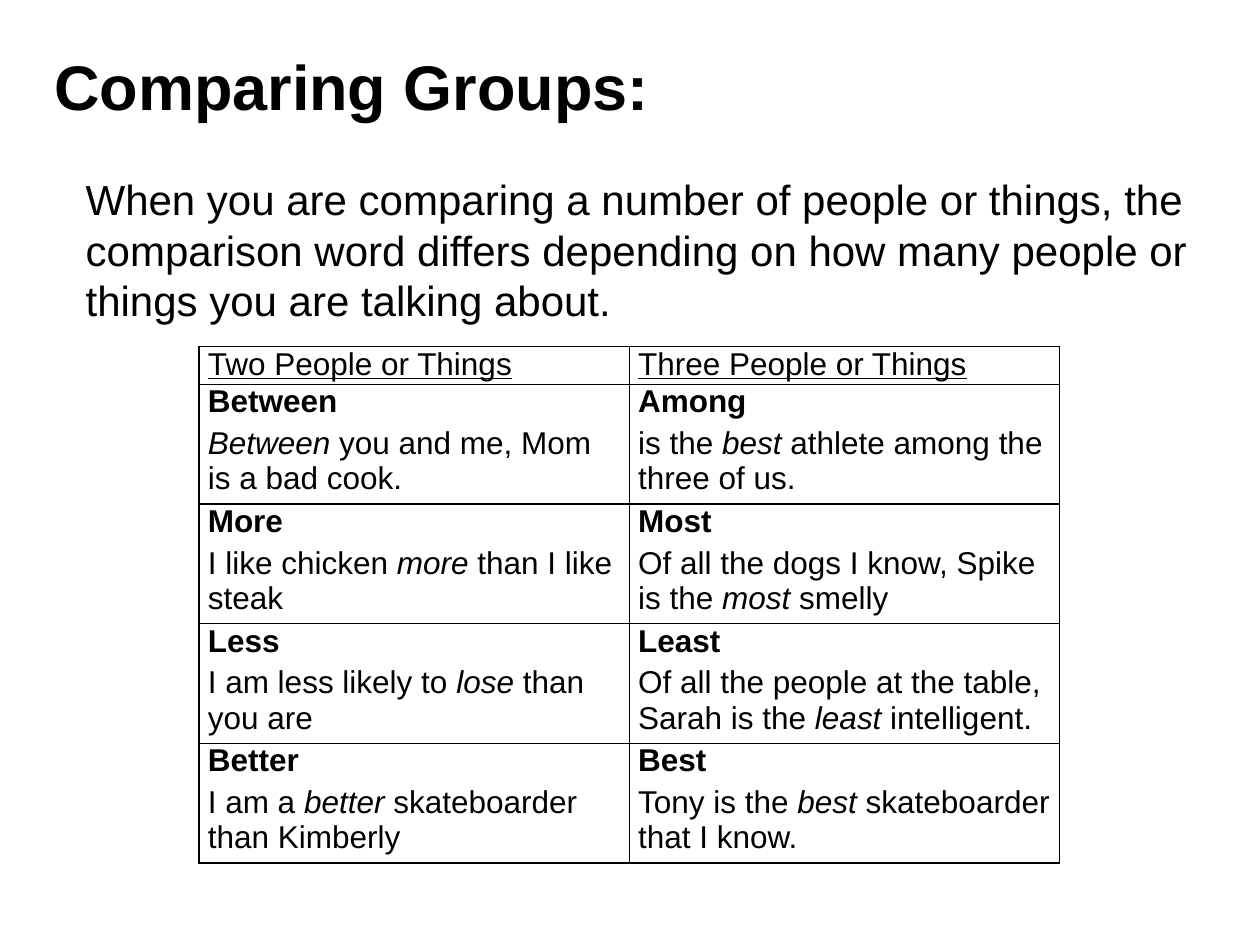
from dataclasses import dataclass

from lxml import etree
from pptx import Presentation
from pptx.dml.color import RGBColor
from pptx.enum.text import MSO_ANCHOR, MSO_AUTO_SIZE, PP_ALIGN
from pptx.oxml.ns import qn
from pptx.util import Inches, Pt

LEFT = PP_ALIGN.LEFT
TOP, MIDDLE = MSO_ANCHOR.TOP, MSO_ANCHOR.MIDDLE
NO_AUTOFIT = MSO_AUTO_SIZE.NONE
TITLE_AND_CONTENT = 1


@dataclass(frozen=True)
class Theme:
    font: str = "Arial"
    ink: str = "000000"
    title_size: int = 36
    body_size: int = 24
    table_size: int = 18
    border_width: int = 1
    example_gap: float = 3.6


THEME = Theme()
TITLE = "Comparing Groups:"
INTRO = (
    "When you are comparing a number of people or things, the comparison word "
    "differs depending on how many people or things you are talking about."
)
HEADINGS = ("Two People or Things", "Three People or Things")
COMPARISONS = [
    (
        ("Between", ("", "Between", " you and me, Mom is a bad cook.")),
        ("Among", ("is the ", "best", " athlete among the three of us.")),
    ),
    (
        ("More", ("I like chicken ", "more", " than I like steak")),
        ("Most", ("Of all the dogs I know, Spike is the ", "most", " smelly")),
    ),
    (
        ("Less", ("I am less likely to ", "lose", " than you are")),
        ("Least", ("Of all the people at the table, Sarah is the ", "least", " intelligent.")),
    ),
    (
        ("Better", ("I am a ", "better", " skateboarder than Kimberly")),
        ("Best", ("Tony is the ", "best", " skateboarder that I know.")),
    ),
]

SLIDE_SIZE = (10, 7.5)
TITLE_BOX = (0.33, 0.33, 5.33, 0.7)
INTRO_BOX = (0.58, 1.33, 9.17, 1.3)
TABLE_LEFT, TABLE_TOP, TABLE_WIDTH = 1.58, 2.75, 6.83
HEADING_HEIGHT, COMPARISON_HEIGHT = 0.3, 0.95
CELL_MARGIN = 0.07


def style(paragraph, size):
    paragraph.alignment = LEFT
    paragraph.space_before = Pt(0)
    paragraph.font.name = THEME.font
    paragraph.font.size = Pt(size)
    paragraph.font.color.rgb = RGBColor.from_string(THEME.ink)


def fill_placeholder(shape, box, text, size, anchor):
    shape.left, shape.top, shape.width, shape.height = map(Inches, box)
    frame = shape.text_frame
    frame.text = text
    frame.word_wrap = True
    frame.auto_size = NO_AUTOFIT
    frame.vertical_anchor = anchor
    paragraph = frame.paragraphs[0]
    style(paragraph, size)
    return paragraph


def remove_bullet(paragraph):
    properties = paragraph._p.get_or_add_pPr()
    properties.set("marL", "0")
    properties.set("indent", "0")
    etree.SubElement(properties, qn("a:buNone"))


def add_borders(cell):
    properties = cell._tc.get_or_add_tcPr()
    for position, side in enumerate(("lnL", "lnR", "lnT", "lnB")):
        line = etree.Element(qn(f"a:{side}"), w=str(Pt(THEME.border_width)))
        fill = etree.SubElement(line, qn("a:solidFill"))
        etree.SubElement(fill, qn("a:srgbClr"), val=THEME.ink)
        properties.insert(position, line)


def prepare_cell(cell, text):
    cell.margin_left = cell.margin_right = Inches(CELL_MARGIN)
    cell.margin_top = cell.margin_bottom = 0
    cell.fill.background()
    add_borders(cell)
    cell.text = text
    paragraph = cell.text_frame.paragraphs[0]
    style(paragraph, THEME.table_size)
    return paragraph


def add_example(cell, parts):
    paragraph = cell.text_frame.add_paragraph()
    style(paragraph, THEME.table_size)
    paragraph.space_before = Pt(THEME.example_gap)
    for part, italic in zip(parts, (False, True, False)):
        if part:
            run = paragraph.add_run()
            run.text = part
            run.font.italic = italic


def add_comparison_table(slide):
    heights = [HEADING_HEIGHT] + [COMPARISON_HEIGHT] * len(COMPARISONS)
    box = (TABLE_LEFT, TABLE_TOP, TABLE_WIDTH, sum(heights))
    table = slide.shapes.add_table(len(heights), len(HEADINGS), *map(Inches, box)).table
    table.first_row = table.horz_banding = False
    for row, height in zip(table.rows, heights):
        row.height = Inches(height)
    for column, heading in enumerate(HEADINGS):
        prepare_cell(table.cell(0, column), heading).font.underline = True
    for row, comparison in enumerate(COMPARISONS, start=1):
        for column, (word, example) in enumerate(comparison):
            cell = table.cell(row, column)
            prepare_cell(cell, word).font.bold = True
            add_example(cell, example)


def main():
    presentation = Presentation()
    presentation.slide_width, presentation.slide_height = map(Inches, SLIDE_SIZE)
    slide = presentation.slides.add_slide(presentation.slide_layouts[TITLE_AND_CONTENT])
    title = fill_placeholder(slide.shapes.title, TITLE_BOX, TITLE, THEME.title_size, MIDDLE)
    title.font.bold = True
    intro = fill_placeholder(slide.placeholders[1], INTRO_BOX, INTRO, THEME.body_size, TOP)
    remove_bullet(intro)
    add_comparison_table(slide)
    presentation.save("out.pptx")


if __name__ == "__main__":
    main()
